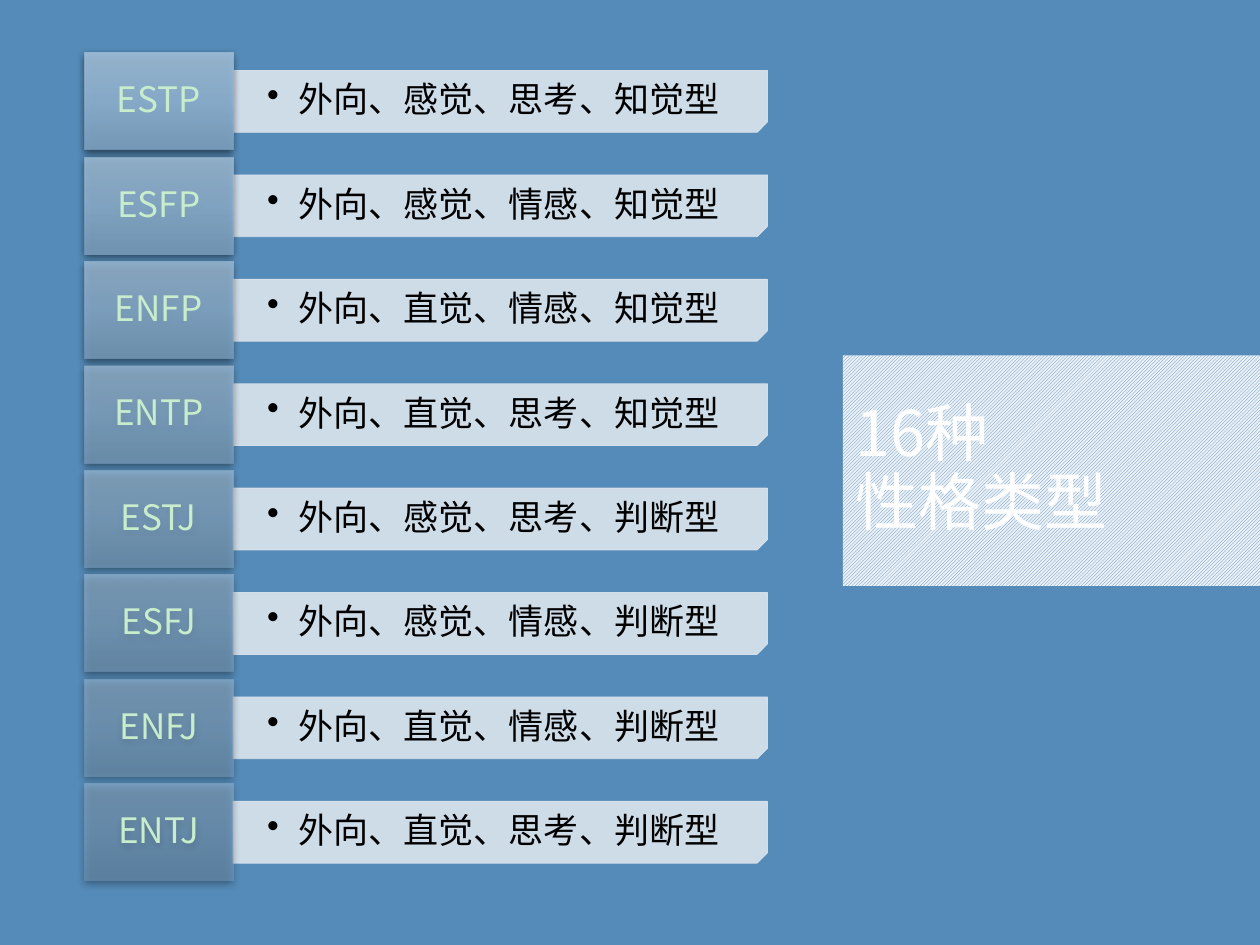
from lxml import etree
from pptx import Presentation
from pptx import util as u
from pptx.dml.color import RGBColor
from pptx.enum import dml, shapes, text
from pptx.oxml.ns import qn

FONT = "Noto Sans CJK SC"
BLUE = RGBColor(0x55, 0x8B, 0xB8)
PALE = RGBColor(0xEA, 0xF0, 0xF6)
BAR = RGBColor(0xDC, 0xE5, 0xEE)
MINT = RGBColor(0xC7, 0xED, 0xCC)
WHITE = RGBColor(0xFF, 0xFF, 0xFF)
BLACK = RGBColor(0x00, 0x00, 0x00)
TILE_STOPS = (
    (0, RGBColor(0xA1, 0xBF, 0xD8)),
    (50, RGBColor(0x91, 0xB6, 0xD5)),
    (100, RGBColor(0x7D, 0xA2, 0xC1)),
)

TYPES = (
    ("ESTP", "外向、感觉、思考、知觉型"),
    ("ESFP", "外向、感觉、情感、知觉型"),
    ("ENFP", "外向、直觉、情感、知觉型"),
    ("ENTP", "外向、直觉、思考、知觉型"),
    ("ESTJ", "外向、感觉、思考、判断型"),
    ("ESFJ", "外向、感觉、情感、判断型"),
    ("ENFJ", "外向、直觉、情感、判断型"),
    ("ENTJ", "外向、直觉、思考、判断型"),
)

LEFT, TOP = u.Inches(0.67), u.Inches(0.42)
TILE_W, TILE_H = u.Inches(1.18), u.Inches(0.77)
BAR_W, BAR_H = u.Inches(4.24), u.Inches(0.49)
TEXT_W, TEXT_H = u.Inches(4.2), u.Inches(0.45)
LAST_TOP = u.Inches(6.22)
PITCH = (LAST_TOP - TOP) / (len(TYPES) - 1)
BAR_LEFT = LEFT + TILE_W


def add_element(parent, tag, **attributes):
    values = {key: str(value) for key, value in attributes.items()}
    return etree.SubElement(parent, qn(tag), values)


def add_color(parent, color, opacity):
    clr = add_element(parent, "a:srgbClr", val=color)
    add_element(clr, "a:alpha", val=round(opacity * 1000))


def set_opacity(element, opacity):
    for clr in element.iter(qn("a:srgbClr")):
        add_element(clr, "a:alpha", val=opacity * 1000)


def set_text(tf, content, size, color, align, inset_x=0.1, inset_y=0.05):
    tf.word_wrap = True
    tf.auto_size = text.MSO_AUTO_SIZE.NONE
    tf.vertical_anchor = text.MSO_ANCHOR.MIDDLE
    tf.margin_left = tf.margin_right = u.Inches(inset_x)
    tf.margin_top = tf.margin_bottom = u.Inches(inset_y)
    tf.text = content
    p = tf.paragraphs[0]
    p.alignment = align
    p.line_spacing = 0.9
    for r in p.runs:
        r.font.size = u.Pt(size)
        r.font.name = FONT
        r.font.color.rgb = color
        add_element(r.font._element, "a:ea", typeface=FONT)
    return p


def add_title(s, slide_w):
    title = s.shapes.title
    title.left, title.top = u.Inches(6.69), u.Inches(2.82)
    title.width, title.height = slide_w - title.left, u.Inches(1.83)
    title.fill.patterned()
    title.fill.pattern = dml.MSO_PATTERN.DARK_UPWARD_DIAGONAL
    title.fill.fore_color.rgb = BLUE
    title.fill.back_color.rgb = PALE
    set_text(title.text_frame, "16种\v性格类型", 36, WHITE, text.PP_ALIGN.LEFT)


def add_bar(group, middle):
    left = BAR_LEFT + (BAR_W - BAR_H) / 2
    sp = group.shapes.add_shape(
        shapes.MSO_SHAPE.SNIP_1_RECTANGLE,
        round(left), round(middle - BAR_W / 2), BAR_H, BAR_W)
    sp.rotation = 90
    sp.shadow.inherit = False
    sp.fill.solid()
    sp.fill.fore_color.rgb = BAR
    sp.line.color.rgb = BAR
    sp.line.width = u.Pt(0.5)
    set_opacity(sp._element.spPr, 90)


def add_description(group, middle, content):
    sp = group.shapes.add_textbox(
        BAR_LEFT, round(middle - TEXT_H / 2), TEXT_W, TEXT_H)
    p = set_text(sp.text_frame, content, 20, BLACK, text.PP_ALIGN.LEFT, 0.27, 0.14)
    p.level = 1
    pPr = p._p.get_or_add_pPr()
    pPr.set("marL", str(u.Inches(0.25)))
    pPr.set("indent", str(-u.Inches(0.25)))
    add_element(pPr, "a:buChar", char="•")


def add_tile(group, middle, label, opacity):
    sp = group.shapes.add_shape(
        shapes.MSO_SHAPE.RECTANGLE,
        LEFT, round(middle - TILE_H / 2), TILE_W, TILE_H)
    sp.line.fill.background()
    sp.fill.gradient()
    sp.fill.gradient_angle = 270
    spPr = sp._element.spPr
    stops = spPr.find(".//" + qn("a:gsLst"))
    stops.clear()
    for position, color in TILE_STOPS:
        add_color(add_element(stops, "a:gs", pos=position * 1000), color, opacity)
    sp.shadow.inherit = False
    shadow = add_element(
        spPr.find(qn("a:effectLst")), "a:outerShdw", blurRad=u.Pt(4.5),
        dist=u.Pt(1.5), dir=5400000, rotWithShape=0)
    add_color(shadow, BLACK, 63)
    set_text(sp.text_frame, label, 20, MINT, text.PP_ALIGN.CENTER, 0.08, 0.04)


def main():
    prs = Presentation()
    prs.slide_width, prs.slide_height = u.Inches(10), u.Inches(7.5)
    s = prs.slides.add_slide(prs.slide_layouts[5])
    s.background.fill.solid()
    s.background.fill.fore_color.rgb = BLUE
    add_title(s, prs.slide_width)
    group = s.shapes.add_group_shape()
    for row, (label, content) in enumerate(TYPES):
        middle = TOP + row * PITCH + TILE_H / 2
        add_bar(group, middle)
        add_description(group, middle, content)
        add_tile(group, middle, label, 90 - 40 * row / (len(TYPES) - 1))
    prs.save("out.pptx")


if __name__ == "__main__":
    main()
